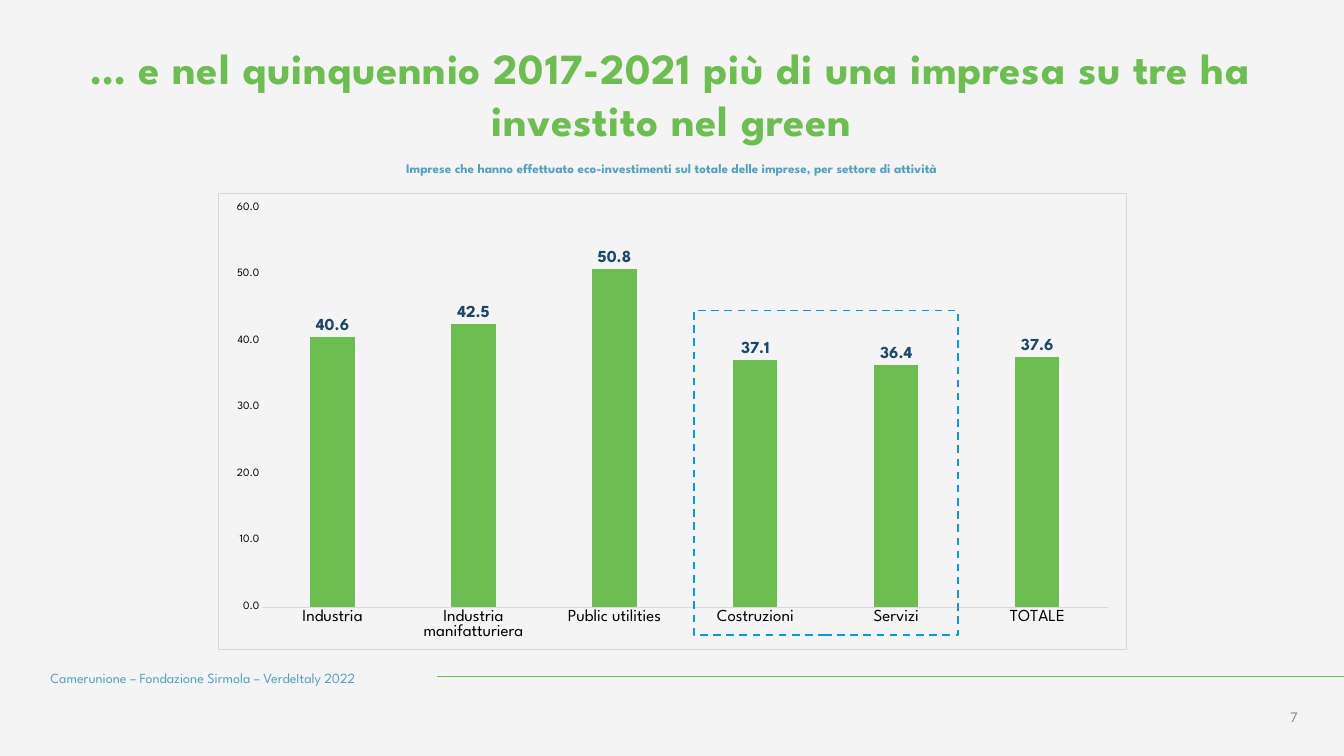
from lxml.etree import SubElement
from pptx import Presentation
from pptx.chart.data import CategoryChartData
from pptx.dml.color import RGBColor
from pptx.enum.chart import XL_CHART_TYPE, XL_LABEL_POSITION, XL_TICK_MARK
from pptx.enum.dml import MSO_LINE
from pptx.enum.shapes import MSO_CONNECTOR, MSO_SHAPE
from pptx.enum.text import MSO_ANCHOR, MSO_AUTO_SIZE, PP_ALIGN
from pptx.oxml import parse_xml
from pptx.oxml.ns import nsdecls, qn
from pptx.util import Inches, Pt

FONT = "League Spartan"
GREEN, TEAL, NAVY, BLUE = "6BBE4F", "4FA3BE", "19486A", "049CE4"
BLACK, GREY, PALE, PAPER = "000000", "8C8C8C", "D9D9D9", "F4F4F4"
SECTORS = {
    "Industria": 40.6,
    "Industria manifatturiera": 42.5,
    "Public utilities": 50.8,
    "Costruzioni": 37.1,
    "Servizi": 36.4,
    "TOTALE": 37.6,
}


def color(hex_value):
    """Turn a hex string into a colour."""
    return RGBColor.from_string(hex_value)


def style_font(font, size, hex_value, bold=False, name=FONT):
    """Set the name, size, colour and weight of a font."""
    font.name, font.size, font.bold = name, Pt(size), bold
    font.color.rgb = color(hex_value)


def style_line(line, hex_value, width):
    """Set the colour and width of a line."""
    line.color.rgb = color(hex_value)
    line.width = Pt(width)


def fill_text(shape, box, text, size, hex_value, bold=False, align=PP_ALIGN.LEFT,
              spacing=None, name=FONT, anchor=MSO_ANCHOR.TOP):
    """Place a text shape in its box and format its one paragraph."""
    shape.left, shape.top, shape.width, shape.height = map(Inches, box)
    frame = shape.text_frame
    frame.text = text
    frame.word_wrap = True
    frame.auto_size = MSO_AUTO_SIZE.NONE
    frame.vertical_anchor = anchor
    frame.margin_left = frame.margin_right = frame.margin_top = frame.margin_bottom = 0
    para = frame.paragraphs[0]
    para.alignment = align
    if spacing:
        para.line_spacing = Pt(spacing)
    span = para.runs[0]
    style_font(span.font, size, hex_value, bold, name)
    return span


def add_text(page, box, *args, **options):
    """Add a text box with one formatted paragraph."""
    shape = page.shapes.add_textbox(*map(Inches, box))
    return fill_text(shape, box, *args, **options)


def add_heading(page, box):
    """Fill the title placeholder and put the chart caption under it."""
    left, top, width, height = box
    span = fill_text(page.shapes.title, box,
                     "… e nel quinquennio 2017-2021 più di una impresa su tre ha investito nel green",
                     46, GREEN, True, PP_ALIGN.CENTER)
    span.font._element.set("spc", "80")
    add_text(page, (left + 4.65, top + height + 0.16, width - 9.29, 0.26),
             "Imprese che hanno effettuato eco-investimenti sul totale delle imprese, "
             "per settore di attività",
             14, TEAL, True, PP_ALIGN.CENTER, 21)


def style_axes(chart):
    """Format the category and value axes."""
    for axis, size in ((chart.category_axis, 18), (chart.value_axis, 12)):
        axis.has_major_gridlines = False
        axis.major_tick_mark = axis.minor_tick_mark = XL_TICK_MARK.NONE
        style_font(axis.tick_labels.font, size, BLACK)
    style_line(chart.category_axis.format.line, PALE, 0.75)
    values = chart.value_axis
    values.minimum_scale, values.maximum_scale, values.major_unit = 0, 60, 10
    values.tick_labels.number_format = "#,##0.0"
    values.tick_labels.number_format_is_linked = False
    values.format.line.fill.background()


def add_border(chart, hex_value, width):
    """Draw a frame around the whole chart."""
    border = parse_xml(
        f'<c:spPr {nsdecls("c", "a")}><a:noFill/><a:ln w="{Pt(width)}"><a:solidFill>'
        f'<a:srgbClr val="{hex_value}"/></a:solidFill></a:ln></c:spPr>')
    chart.element.find(qn("c:chart")).addnext(border)


def add_sector_chart(page, box):
    """Add the column chart of investing firms by sector."""
    data = CategoryChartData(number_format="#,##0.0")
    data.categories = list(SECTORS)
    data.add_series("Series 1", list(SECTORS.values()))
    chart = page.shapes.add_chart(
        XL_CHART_TYPE.COLUMN_CLUSTERED, *map(Inches, box), data).chart
    chart.has_title = chart.has_legend = False
    style_font(chart.font, 10, BLACK, name="Calibri")
    style_axes(chart)
    add_border(chart, PALE, 0.75)

    plot = chart.plots[0]
    plot.gap_width, plot.overlap, plot.vary_by_categories = 219, -27, False
    bars = plot.series[0]
    bars.invert_if_negative = False
    bars.format.fill.solid()
    bars.format.fill.fore_color.rgb = color(GREEN)
    labels = bars.data_labels
    labels.show_value = True
    labels.position = XL_LABEL_POSITION.OUTSIDE_END
    labels.number_format, labels.number_format_is_linked = "#,##0.0", False
    style_font(labels.font, 18, NAVY, True)


def add_highlight(page, box):
    """Draw the dashed frame around two sectors."""
    frame = page.shapes.add_shape(MSO_SHAPE.RECTANGLE, *map(Inches, box))
    frame.shadow.inherit = False
    frame.fill.background()
    style_line(frame.line, BLUE, 2)
    frame.line.dash_style = MSO_LINE.DASH


def add_footer(page, box):
    """Add the source, the rule and the page number."""
    left, top, width, height = box
    right = left + width
    add_text(page, (left, top, 5.55, 0.27),
             "Camerunione – Fondazione Sirmola – VerdeItaly 2022", 15, TEAL, spacing=21)
    rule = page.shapes.add_connector(
        MSO_CONNECTOR.STRAIGHT, Inches(left + 5.75), Inches(top + 0.15),
        Inches(right), Inches(top + 0.15))
    style_line(rule.line, GREEN, 0.75)
    SubElement(rule.element.spPr, qn("a:effectLst"))
    add_text(page, (right - 2.92, top + height - 0.4, 2.23, 0.4), "7", 16, GREY,
             align=PP_ALIGN.RIGHT, name="Calibri", anchor=MSO_ANCHOR.MIDDLE)


def main():
    """Build and save the deck."""
    deck = Presentation()
    deck.slide_width, deck.slide_height = Inches(20), Inches(11.25)
    page = deck.slides.add_slide(deck.slide_layouts[5])
    page.background.fill.solid()
    page.background.fill.fore_color.rgb = color(PAPER)
    add_heading(page, (0.87, 0.62, 18.25, 1.55))
    add_sector_chart(page, (3.25, 2.87, 13.51, 6.8))
    add_highlight(page, (10.33, 4.62, 3.92, 4.83))
    add_footer(page, (0.75, 9.92, 19.25, 0.94))
    deck.save("out.pptx")


if __name__ == "__main__":
    main()
